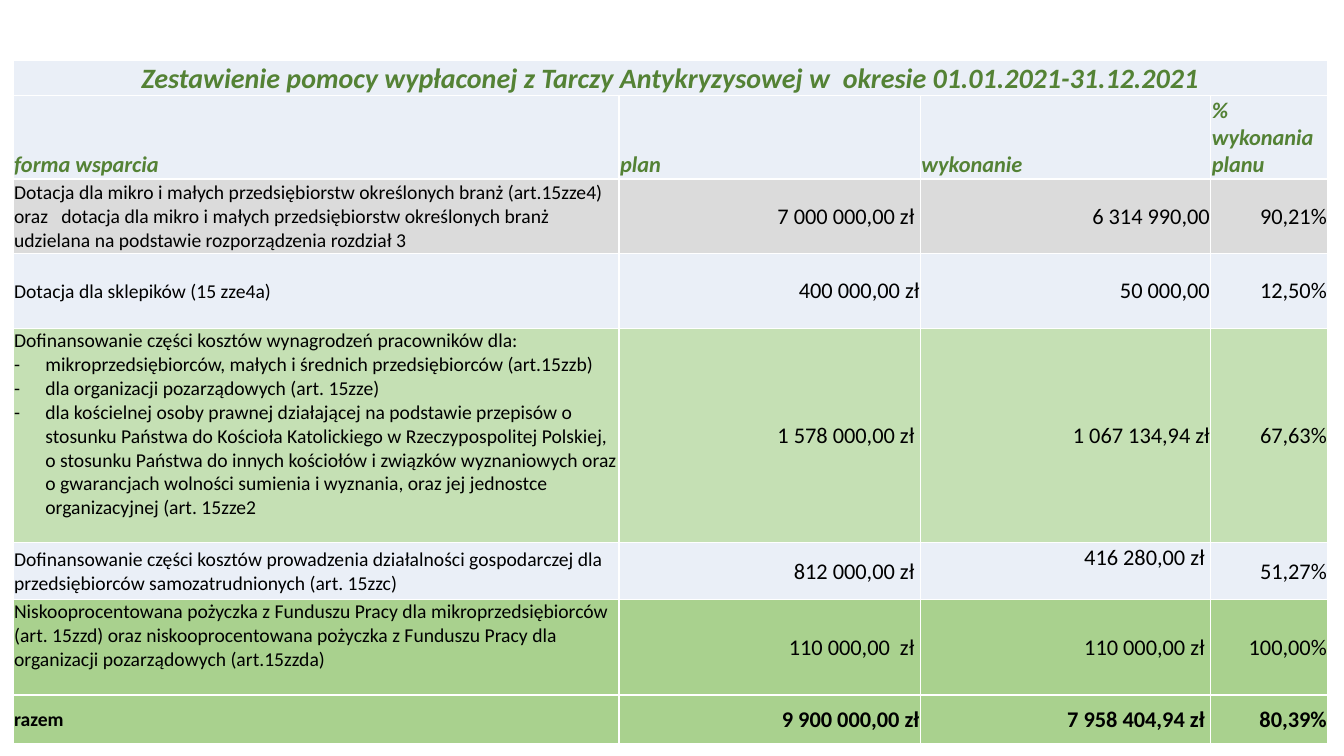
from lxml import etree
from pptx import Presentation
from pptx.dml.color import RGBColor
from pptx.enum.text import MSO_ANCHOR, PP_ALIGN
from pptx.oxml.ns import qn
from pptx.util import Inches, Pt

TOP, MIDDLE, BOTTOM = MSO_ANCHOR.TOP, MSO_ANCHOR.MIDDLE, MSO_ANCHOR.BOTTOM
LEFT, CENTER, RIGHT = PP_ALIGN.LEFT, PP_ALIGN.CENTER, PP_ALIGN.RIGHT

BLACK = RGBColor(0x00, 0x00, 0x00)
HEADING_GREEN = RGBColor(0x54, 0x82, 0x35)
PALE_BLUE = RGBColor(0xEA, 0xEF, 0xF7)
GREY = RGBColor(0xDB, 0xDB, 0xDB)
LIGHT_GREEN = RGBColor(0xC5, 0xE0, 0xB4)
GREEN = RGBColor(0xA9, 0xD1, 0x8E)

HEADING = "Zestawienie pomocy wypłaconej z Tarczy Antykryzysowej w  okresie 01.01.2021-31.12.2021"
COLUMNS = [("forma wsparcia", 6.01), ("plan", 2.99), ("wykonanie", 2.88), ("% wykonania planu", 1.16)]
HEADING_HEIGHT, COLUMNS_HEIGHT = 0.34, 0.82

SUPPORT = [
    (0.74, GREY, MIDDLE,
     ["Dotacja dla mikro i małych przedsiębiorstw określonych branż (art.15zze4) oraz   dotacja dla "
      "mikro i małych przedsiębiorstw określonych branż udzielana na podstawie rozporządzenia rozdział 3"],
     ["7 000 000,00 zł ", "6 314 990,00", "90,21%"]),
    (0.74, PALE_BLUE, MIDDLE,
     ["Dotacja dla sklepików (15 zze4a)"],
     ["400 000,00 zł", "50 000,00", "12,50%"]),
    (2.13, LIGHT_GREEN, TOP,
     ["Dofinansowanie części kosztów wynagrodzeń pracowników dla:",
      "mikroprzedsiębiorców, małych i średnich przedsiębiorców (art.15zzb)",
      "dla organizacji pozarządowych (art. 15zze)",
      "dla kościelnej osoby prawnej działającej na podstawie przepisów o stosunku Państwa do Kościoła "
      "Katolickiego w Rzeczypospolitej Polskiej, o stosunku Państwa do innych kościołów i związków "
      "wyznaniowych oraz o gwarancjach wolności sumienia i wyznania, oraz jej jednostce organizacyjnej "
      "(art. 15zze2"],
     ["1 578 000,00 zł ", "1 067 134,94 zł", "67,63%"]),
    (0.56, PALE_BLUE, MIDDLE,
     ["Dofinansowanie części kosztów prowadzenia działalności gospodarczej dla przedsiębiorców "
      "samozatrudnionych (art. 15zzc)"],
     ["812 000,00 zł ", "416 280,00 zł ", "51,27%"]),
    (0.95, GREEN, TOP,
     ["Niskooprocentowana pożyczka z Funduszu Pracy dla mikroprzedsiębiorców (art. 15zzd) oraz "
      "niskooprocentowana pożyczka z Funduszu Pracy dla organizacji pozarządowych (art.15zzda)"],
     ["110 000,00  zł ", "110 000,00 zł ", "100,00%"]),
    (0.48, GREEN, MIDDLE, ["razem"], ["9 900 000,00 zł", "7 958 404,94 zł ", "80,39%"]),
]
RAISED_AMOUNT = "416 280,00 zł "


def add_borders(cell):
    properties = cell._tc.get_or_add_tcPr()
    for side in ("a:lnL", "a:lnR", "a:lnT", "a:lnB"):
        line = etree.SubElement(properties, qn(side), w=str(Pt(1)))
        fill = etree.SubElement(line, qn("a:solidFill"))
        etree.SubElement(fill, qn("a:srgbClr"), val="FFFFFF")


def add_dash(paragraph):
    properties = paragraph._p.get_or_add_pPr()
    properties.set("marL", str(Inches(0.31)))
    properties.set("indent", str(-Inches(0.31)))
    etree.SubElement(properties, qn("a:buFont"), typeface="Calibri")
    etree.SubElement(properties, qn("a:buChar"), char="-")


def fill_cell(cell, lines, size, fill, anchor, align=LEFT, color=BLACK, bold=False, italic=False):
    add_borders(cell)
    cell.fill.solid()
    cell.fill.fore_color.rgb = fill
    cell.vertical_anchor = anchor
    cell.margin_left = cell.margin_right = cell.margin_top = Inches(0.01)
    cell.margin_bottom = 0
    cell.text = "\n".join(lines)
    for position, paragraph in enumerate(cell.text_frame.paragraphs):
        paragraph.alignment = align
        if position:
            add_dash(paragraph)
        font = paragraph.font
        font.name, font.size, font.bold, font.italic = "Calibri", Pt(size), bold, italic
        font.color.rgb = color


def main():
    prs = Presentation()
    prs.slide_width, prs.slide_height = Inches(13.33), Inches(7.5)
    slide = prs.slides.add_slide(prs.slide_layouts[6])

    heights = [HEADING_HEIGHT, COLUMNS_HEIGHT] + [row[0] for row in SUPPORT]
    widths = [width for _, width in COLUMNS]
    summary = slide.shapes.add_table(len(heights), len(widths), Inches(0.13), Inches(0.6),
                                     Inches(sum(widths)), Inches(sum(heights))).table
    summary.first_row = summary.horz_banding = False
    for column, width in zip(summary.columns, widths):
        column.width = Inches(width)
    for row, height in zip(summary.rows, heights):
        row.height = Inches(height)

    heading_style = {"fill": PALE_BLUE, "anchor": BOTTOM, "color": HEADING_GREEN, "bold": True, "italic": True}
    summary.cell(0, 0).merge(summary.cell(0, len(widths) - 1))
    fill_cell(summary.cell(0, 0), [HEADING], 20, align=CENTER, **heading_style)
    for c, (label, _) in enumerate(COLUMNS):
        fill_cell(summary.cell(1, c), [label], 16, **heading_style)

    for r, (_, fill, anchor, form, amounts) in enumerate(SUPPORT, start=2):
        total = r == len(heights) - 1
        fill_cell(summary.cell(r, 0), form, 14, fill, anchor, bold=total)
        for c, amount in enumerate(amounts, start=1):
            amount_anchor = TOP if amount == RAISED_AMOUNT else MIDDLE
            fill_cell(summary.cell(r, c), [amount], 16, fill, amount_anchor, RIGHT, bold=total)

    prs.save("out.pptx")


if __name__ == "__main__":
    main()
